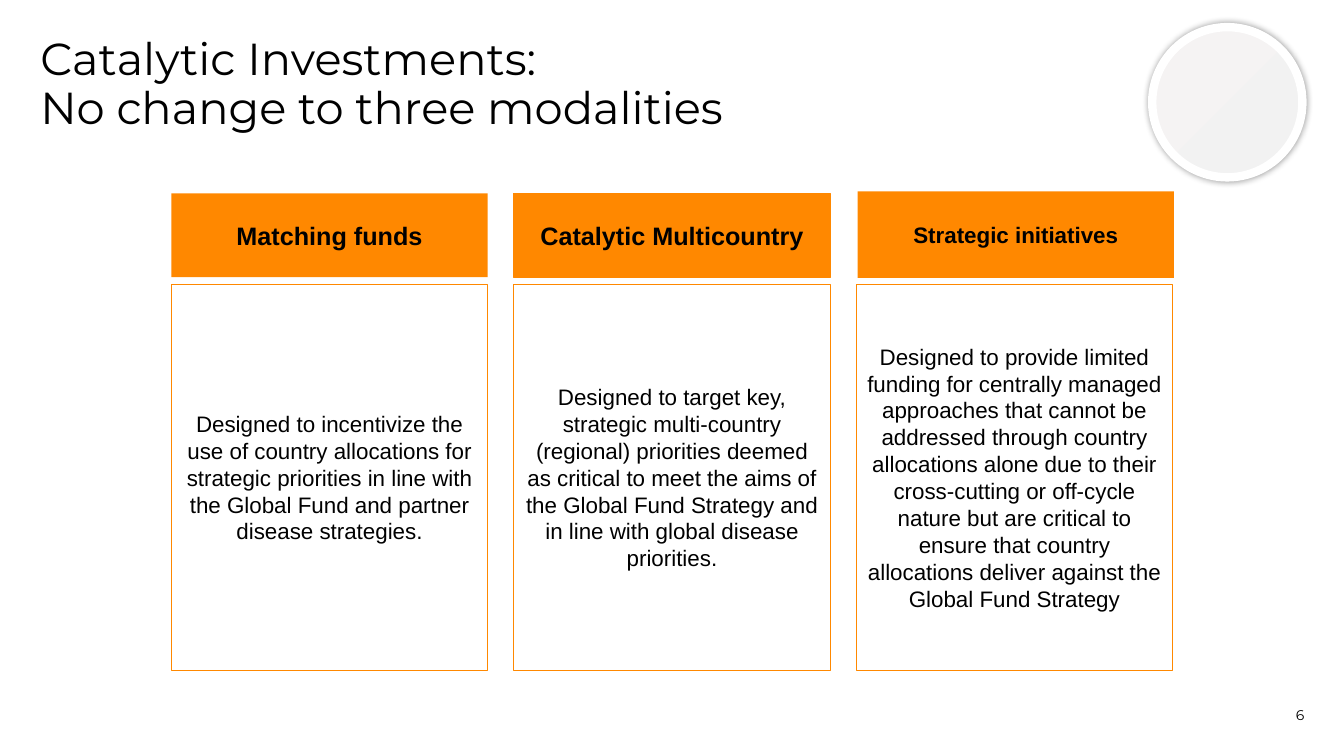
from dataclasses import dataclass

from lxml.etree import SubElement
from pptx import Presentation
from pptx.dml.color import RGBColor
from pptx.enum.shapes import MSO_SHAPE
from pptx.enum.text import MSO_ANCHOR, PP_ALIGN
from pptx.oxml.ns import qn
from pptx.shapes.autoshape import Shape
from pptx.slide import Slide
from pptx.util import Pt

COLORS = {
    "orange": "FF8800",
    "white": "FFFFFF",
    "black": "000000",
    "disc_start": "F5F3F3",
    "disc_end": "F2F2F2",
}
COLUMN_LEFT, COLUMN_PITCH, COLUMN_WIDTH = 122.4, 244.6, 226
BODY_TOP, BODY_HEIGHT = 203, 275.8


@dataclass(frozen=True)
class Box:
    left: float
    top: float
    width: float
    height: float


@dataclass(frozen=True)
class Modality:
    heading: str
    description: str
    heading_size: float = 18
    heading_shift: float = 0
    heading_top: float = 138.2
    heading_height: float = 59.8
    heading_outlined: bool = False


MODALITIES = [
    Modality(
        "Matching funds",
        "Designed to incentivize the use of country allocations for strategic "
        "priorities in line with the Global Fund and partner disease strategies.",
    ),
    Modality(
        "Catalytic Multicountry",
        "Designed to target key, strategic multi-country (regional) priorities "
        "deemed as critical to meet the aims of the Global Fund Strategy and "
        "in line with global disease priorities.",
        heading_outlined=True,
    ),
    Modality(
        "Strategic initiatives",
        "Designed to provide limited funding for centrally managed approaches "
        "that cannot be addressed through country allocations alone due to their "
        "cross-cutting or off-cycle nature but are critical to ensure that country "
        "allocations deliver against the Global Fund Strategy",
        heading_size=16,
        heading_shift=1,
        heading_top=136.8,
        heading_height=61.8,
    ),
]


def rgb(name: str) -> RGBColor:
    return RGBColor.from_string(COLORS[name])


def apply(target: object, values: dict) -> None:
    for name, value in values.items():
        setattr(target, name, value)


def place(box: Box) -> tuple:
    return Pt(box.left), Pt(box.top), Pt(box.width), Pt(box.height)


def write(sp: Shape, lines: list[str], font: dict, para: dict, frame: dict) -> None:
    tf = sp.text_frame
    apply(tf, {"word_wrap": True, **frame})
    p = tf.paragraphs[0]
    apply(p, para)
    for i, line in enumerate(lines):
        if i:
            p.add_line_break()
        r = p.add_run()
        r.text = line
        apply(r.font, font)
        r.font.color.rgb = rgb("black")


def add_label(slide: Slide, box: Box, lines: list[str], size: float,
              para: dict, anchor: MSO_ANCHOR) -> None:
    sp = slide.shapes.add_textbox(*place(box))
    margins = {f"margin_{side}": 0 for side in ("left", "top", "right", "bottom")}
    write(sp, lines, {"name": "Montserrat", "size": Pt(size)}, para,
          {"vertical_anchor": anchor, **margins})


def add_panel(slide: Slide, box: Box, text: str, fill: str, size: float,
              bold: bool = False, outlined: bool = True) -> None:
    sp = slide.shapes.add_shape(MSO_SHAPE.RECTANGLE, *place(box))
    sp.shadow.inherit = False
    sp.fill.solid()
    sp.fill.fore_color.rgb = rgb(fill)
    if outlined:
        sp.line.color.rgb = rgb("orange")
        sp.line.width = Pt(0.5)
    else:
        sp.line.fill.background()
    write(sp, [text], {"name": "Arial", "size": Pt(size), "bold": bold},
          {"alignment": PP_ALIGN.CENTER}, {"vertical_anchor": MSO_ANCHOR.MIDDLE})


def add_modality(slide: Slide, index: int, item: Modality) -> None:
    left = COLUMN_LEFT + index * COLUMN_PITCH
    heading = Box(left + item.heading_shift, item.heading_top,
                  COLUMN_WIDTH, item.heading_height)
    body = Box(left, BODY_TOP, COLUMN_WIDTH, BODY_HEIGHT)
    add_panel(slide, heading, item.heading, "orange", item.heading_size,
              bold=True, outlined=item.heading_outlined)
    add_panel(slide, body, item.description, "white", 16)


def add_disc(slide: Slide, box: Box) -> None:
    sp = slide.shapes.add_shape(MSO_SHAPE.OVAL, *place(box))
    sp.fill.gradient()
    sp.fill.gradient_angle = 315
    for stop, name in zip(sp.fill.gradient_stops, ("disc_start", "disc_end")):
        stop.color.rgb = rgb(name)
    sp.line.color.rgb = rgb("white")
    sp.line.width = Pt(6)
    sp.shadow.inherit = False
    effects = sp._element.spPr.find(qn("a:effectLst"))
    shadow = SubElement(effects, qn("a:outerShdw"), blurRad=str(Pt(5)),
                        dist="0", dir="0", algn="ctr", rotWithShape="0")
    color = SubElement(shadow, qn("a:srgbClr"), val=COLORS["black"])
    SubElement(color, qn("a:alpha"), val="40000")


def main() -> None:
    prs = Presentation()
    apply(prs, {"slide_width": Pt(960), "slide_height": Pt(540)})
    slide = prs.slides.add_slide(prs.slide_layouts[6])
    add_label(slide, Box(861, 488.2, 70.6, 28.8), ["6"], 10,
              {"alignment": PP_ALIGN.RIGHT}, MSO_ANCHOR.BOTTOM)
    add_disc(slide, Box(823, 19.4, 107.3, 107.3))
    for i, item in enumerate(MODALITIES):
        add_modality(slide, i, item)
    add_label(slide, Box(28.8, 26.6, 903.6, 74.2),
              ["Catalytic Investments:", "No change to three modalities"], 32,
              {"line_spacing": 0.9}, MSO_ANCHOR.TOP)
    prs.save("out.pptx")


if __name__ == "__main__":
    main()
